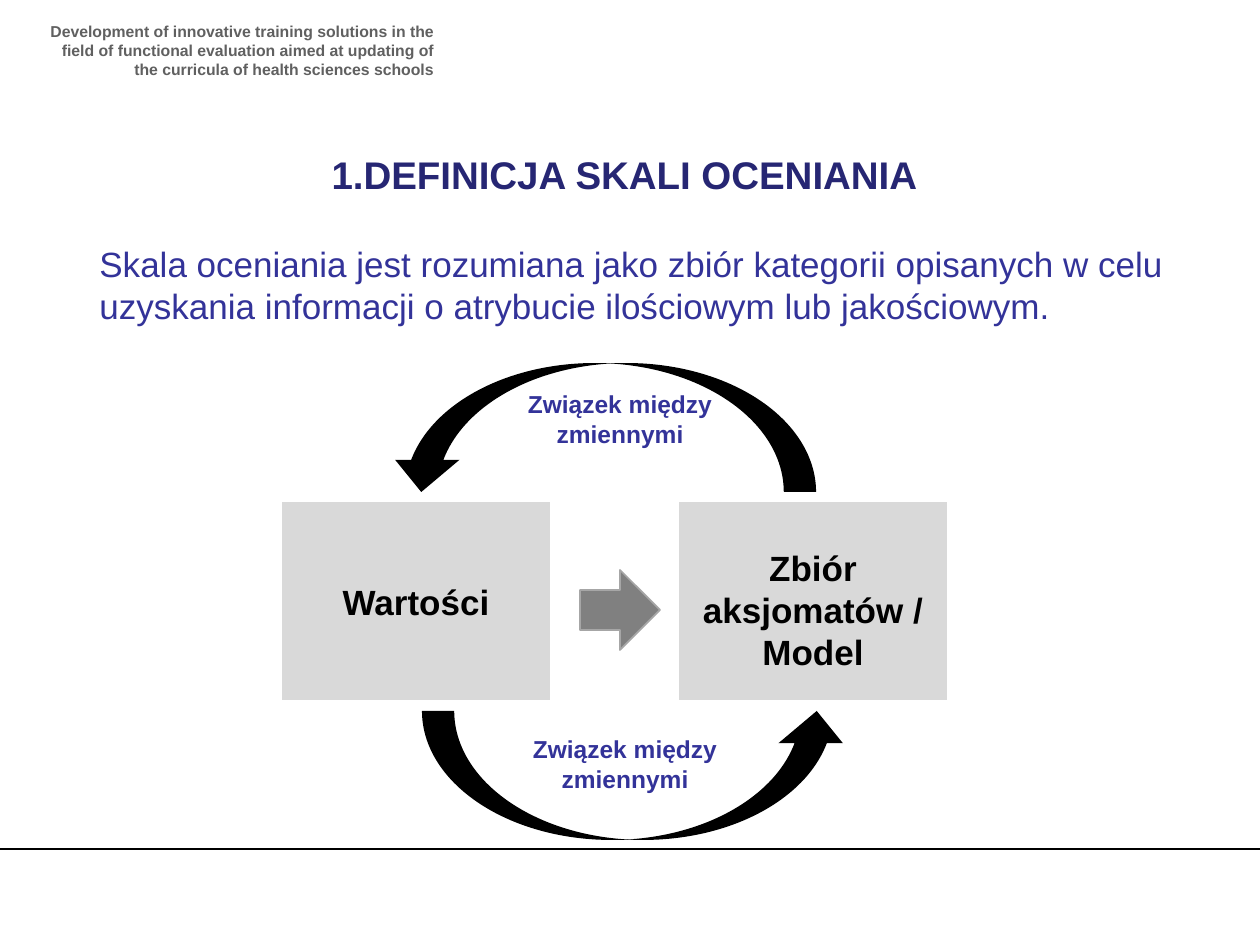
"""Build the slide defining a rating scale, with a cycle between values and model."""
from lxml import etree
from pptx import Presentation, util as u
from pptx.dml.color import RGBColor
from pptx.enum import shapes, text
from pptx.oxml import ns

PX = u.Inches(1) / 126
COLORS = {"rule": "000000", "header": "606060", "title": "262673", "body": "333399",
          "box": "D9D9D9", "black": "000000", "arrow": "808080", "edge": "A6A6A6"}
SHAPE, ALIGN = shapes.MSO_SHAPE, text.PP_ALIGN

RELATION = "Związek między zmiennymi"
RULE = (-6, 849, 1260, 849)
SHAPES = [
    (SHAPE.RECTANGLE, (679, 502, 268, 198), "box", None, 0),
    (SHAPE.RECTANGLE, (282, 502, 268, 198), "box", None, 0),
    (SHAPE.RIGHT_ARROW, (580, 570, 80, 80), "arrow", "edge", 0),
    (SHAPE.CURVED_UP_ARROW, (422, 711, 427, 129), "black", None, 0),
    (SHAPE.CURVED_UP_ARROW, (389, 363, 427, 129), "black", None, 180),
]
TEXTS = [
    ("Development of innovative training solutions in the ﬁeld of functional evaluation "
     "aimed at updating of the curricula of health sciences schools",
     (35, 16, 411, 59), 9, "header", True, ALIGN.RIGHT),
    ("1.DEFINICJA SKALI OCENIANIA", (84, 145, 1081, 59), 22, "title", True, ALIGN.CENTER),
    ("Skala oceniania jest rozumiana jako zbiór kategorii opisanych w celu uzyskania "
     "informacji o atrybucie ilościowym lub jakościowym.",
     (87, 236, 1148, 97), 20, "body", False, ALIGN.LEFT),
    ("Wartości", (282, 574, 268, 55), 20, "black", True, ALIGN.CENTER),
    ("Zbiór aksjomatów /Model", (679, 540, 268, 140), 20, "black", True, ALIGN.CENTER),
    (RELATION, (491, 728, 268, 72), 14, "body", True, ALIGN.CENTER),
    (RELATION, (486, 383, 268, 72), 14, "body", True, ALIGN.CENTER),
]


def emu(lengths):
    return [round(length * PX) for length in lengths]


def color(name):
    return RGBColor.from_string(COLORS[name])


def add_rule(slide):
    rule = slide.shapes.add_connector(shapes.MSO_CONNECTOR.STRAIGHT, *emu(RULE))
    rule.line.color.rgb = color("rule")
    rule.line.width = u.Pt(1)
    etree.SubElement(rule._element.spPr, ns.qn("a:effectLst"))


def add_shape(slide, kind, place, fill, line, rotation):
    shape = slide.shapes.add_shape(kind, *emu(place))
    shape.shadow.inherit = False
    shape.rotation = rotation
    shape.fill.solid()
    shape.fill.fore_color.rgb = color(fill)
    if line:
        shape.line.color.rgb = color(line)
        shape.line.width = u.Pt(1)
    else:
        shape.line.fill.background()


def add_text(slide, words, place, size, ink, bold, align):
    frame = slide.shapes.add_textbox(*emu(place)).text_frame
    frame.word_wrap = True
    paragraph = frame.paragraphs[0]
    paragraph.text = words
    paragraph.alignment = align
    font = paragraph.font
    font.name, font.size, font.bold = "Arial", u.Pt(size), bold
    font.color.rgb = color(ink)


def main():
    presentation = Presentation()
    presentation.slide_width, presentation.slide_height = u.Inches(10), u.Inches(7.5)
    slide = presentation.slides.add_slide(presentation.slide_layouts[6])
    add_rule(slide)
    for item in SHAPES:
        add_shape(slide, *item)
    for item in TEXTS:
        add_text(slide, *item)
    presentation.save("out.pptx")


if __name__ == "__main__":
    main()
